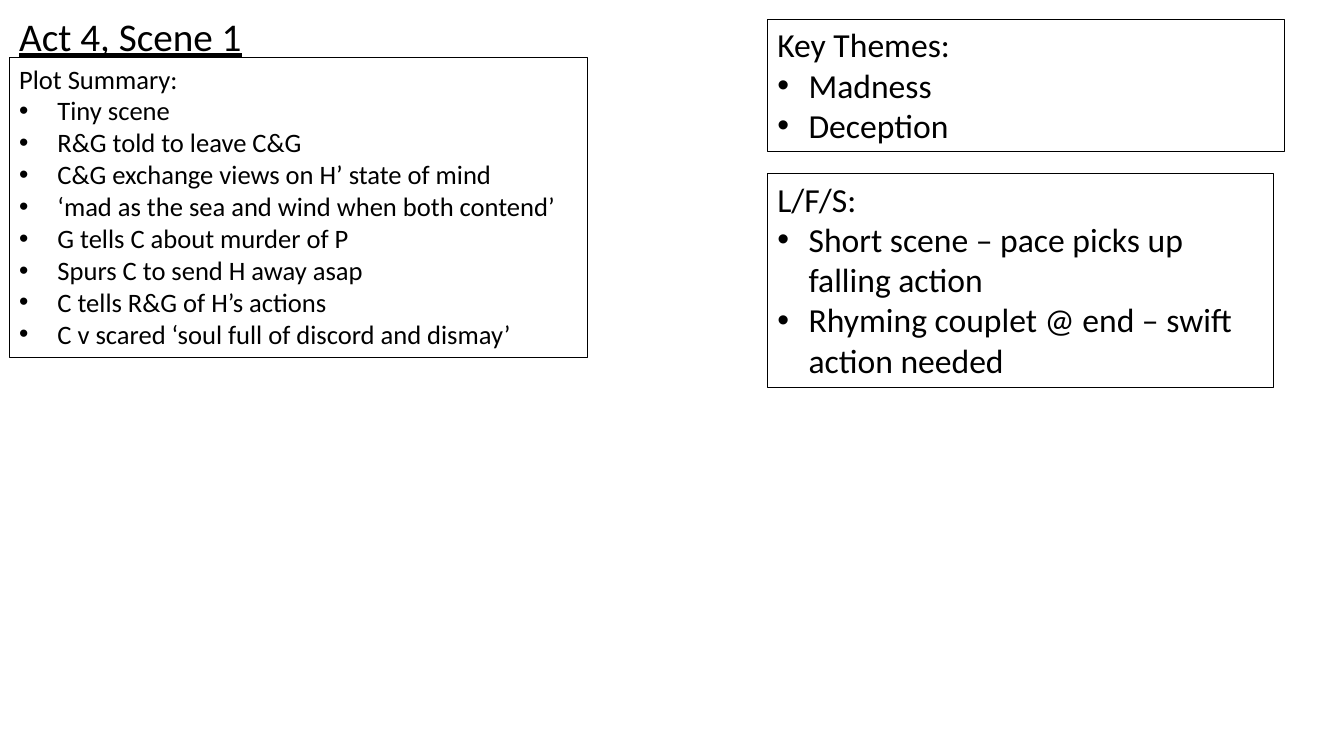
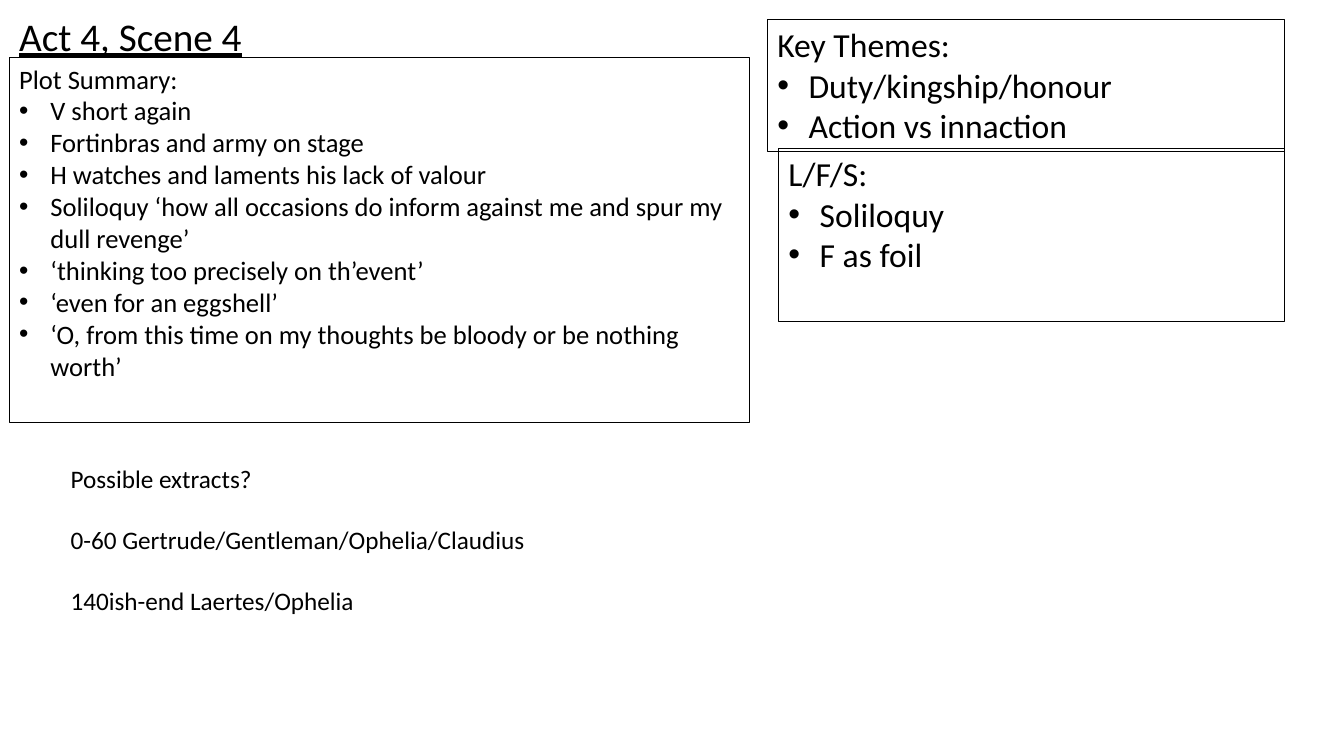
from lxml import etree
from pptx import Presentation, util as u
from pptx.dml.color import RGBColor
from pptx.enum import text as t
from pptx.oxml.ns import qn

PX = 9144  # EMU in one px, 100 px to the inch
HEX = {"ink": "000000", "paper": "FFFFFF"}
FONT = "Calibri"


def ink(name):
    return RGBColor.from_string(HEX[name])


def write(para, words, size, under=False, gap=0, hang=None):
    """Fill a paragraph; hang is the bullet indent in px, None for no bullet."""
    para.alignment = t.PP_ALIGN.LEFT
    para.space_before, para.space_after = u.Pt(gap), u.Pt(0)
    run = para.add_run()
    run.text = words
    font = run.font
    font.name, font.size = FONT, u.Pt(size)
    font.bold, font.underline = False, under
    font.color.rgb = ink("ink")
    props = para._p.get_or_add_pPr()
    props.set("marL", str((hang or 0) * PX))
    props.set("indent", str(-(hang or 0) * PX))
    if hang is None:
        etree.SubElement(props, qn("a:buNone"))
    else:
        etree.SubElement(props, qn("a:buFont"), typeface="Arial")
        etree.SubElement(props, qn("a:buChar"), char="•")


class Deck:
    def __init__(self):
        self.prs = Presentation()
        self.prs.slide_width = 1333 * PX
        self.prs.slide_height = 750 * PX
        self.layout = self.prs.slide_layouts.get_by_name("Comparison")
        back = self.prs.slide_master.background.fill
        back.solid()
        back.fore_color.rgb = ink("paper")

    def start(self, title):
        self.slide = self.prs.slides.add_slide(self.layout)
        head, *self.free = self.slide.placeholders
        frame = self.place(head, (9, 7, 244, 57), wrap=False)
        write(frame.paragraphs[0], title, 28, under=True)

    def place(self, shape, at, wrap=True):
        shape.left, shape.top, shape.width, shape.height = (n * PX for n in at)
        frame = shape.text_frame
        frame.word_wrap = wrap
        frame.auto_size = t.MSO_AUTO_SIZE.NONE
        frame.vertical_anchor = t.MSO_ANCHOR.TOP
        return frame

    def text(self, at, head, items, size, **style):
        """Put a heading and its items in the next free body placeholder."""
        shape = self.free.pop(0)
        frame = self.place(shape, at)
        write(frame.paragraphs[0], head, size)
        for item in items:
            write(frame.add_paragraph(), item, size, **style)
        return shape

    def box(self, at, head, items, size=24, hang=31):
        shape = self.text(at, head, items, size, hang=hang)
        shape.line.color.rgb = ink("ink")
        shape.line.width = u.Pt(0.75)

    def themes(self, items):
        self.box((761, 19, 513, 131), "Key Themes:", items)

    def style(self, at, items):
        self.box(at, "L/F/S:", items)

    def plot(self, width, height, items, hang=31):
        self.box((9, 57, width, height), "Plot Summary:", items, 19, hang)

    def close(self):
        for shape in self.free:
            shape.element.getparent().remove(shape.element)


def main():
    deck = Deck()

    deck.start("Act 4, Scene 1")
    deck.themes(["Madness", "Deception"])
    deck.style((761, 172, 502, 212), [
        "Short scene – pace picks up falling action",
        "Rhyming couplet @ end – swift action needed",
    ])
    deck.plot(574, 298, [
        "Tiny scene",
        "R&G told to leave C&G",
        "C&G exchange views on H’ state of mind",
        "‘mad as the sea and wind when both contend’",
        "G tells C about murder of P",
        "Spurs C to send H away asap",
        "C tells R&G of H’s actions",
        "C v scared ‘soul full of discord and dismay’",
    ], hang=38)
    deck.close()

    deck.start("Act 4, Scene 4")
    deck.themes(["Duty/kingship/honour", "Action vs innaction"])
    deck.style((772, 147, 502, 172), ["Soliloquy", "F as foil"])
    deck.plot(734, 362, [
        "V short again",
        "Fortinbras and army on stage",
        "H watches and laments his lack of valour",
        "Soliloquy ‘how all occasions do inform against me and spur my "
        "dull revenge’",
        "‘thinking too precisely on th’event’",
        "‘even for an eggshell’",
        "‘O, from this time on my thoughts be bloody or be nothing worth’",
    ])
    deck.text((60, 455, 855, 222), "Possible extracts?", [
        "0-60 Gertrude/Gentleman/Ophelia/Claudius",
        "140ish-end Laertes/Ophelia",
    ], 18, gap=22)
    deck.close()

    deck.prs.save("out.pptx")


if __name__ == "__main__":
    main()
